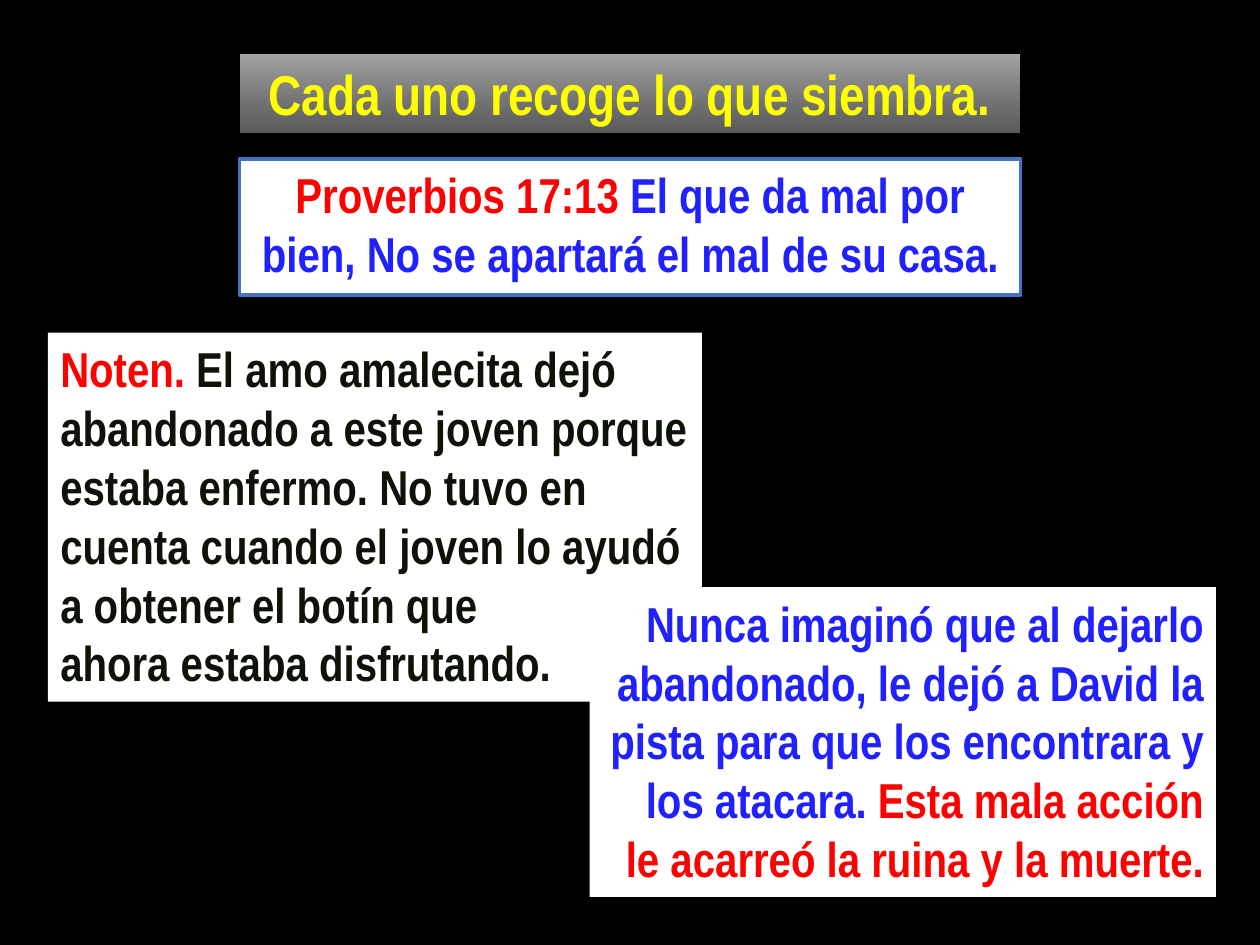
from dataclasses import dataclass

from lxml.etree import SubElement
from pptx import Presentation
from pptx.dml.color import RGBColor
from pptx.enum.shapes import MSO_SHAPE
from pptx.enum.text import MSO_ANCHOR, MSO_AUTO_SIZE, PP_ALIGN
from pptx.oxml.ns import qn
from pptx.util import Inches, Pt


@dataclass(frozen=True)
class Theme:
    font: str = "Arial Narrow"
    title_size: int = 32
    body_size: int = 28
    black: str = "000000"
    white: str = "FFFFFF"
    yellow: str = "FFFF00"
    red: str = "FF0000"
    blue: str = "2121FF"
    dark: str = "0E1307"
    navy: str = "002060"
    border: str = "4472C4"
    gradient_top: str = "A6A6A6"
    gradient_bottom: str = "797979"


class SlideBuilder:
    def __init__(self, slide, theme):
        self.slide = slide
        self.theme = theme
        self.paint(slide.background.fill, theme.black)

    def paint(self, fill, color):
        fill.solid()
        fill.fore_color.rgb = RGBColor.from_string(color)

    def add_box(self, left, top, width, height, border=None, border_width=0.75):
        shape = self.slide.shapes.add_shape(
            MSO_SHAPE.RECTANGLE, Inches(left), Inches(top), Inches(width), Inches(height))
        shape.shadow.inherit = False
        self.paint(shape.fill, self.theme.white)
        if border:
            self.paint(shape.line.fill, border)
            shape.line.width = Pt(border_width)
        else:
            shape.line.fill.background()
        return shape

    def add_gradient(self, shape):
        shape.fill.gradient()
        shape.fill.gradient_angle = 270
        colors = (self.theme.gradient_top, self.theme.gradient_bottom)
        for stop, color in zip(shape.fill.gradient_stops, colors):
            stop.color.rgb = RGBColor.from_string(color)
        gradient = shape._element.spPr.find(qn("a:gradFill"))
        last_color = list(gradient.iter(qn("a:srgbClr")))[-1]
        SubElement(last_color, qn("a:alpha")).set("val", "74000")

    def add_text(self, shape, paragraphs, size, alignment, outline_width=0.25):
        text_frame = shape.text_frame
        text_frame.word_wrap = True
        text_frame.vertical_anchor = MSO_ANCHOR.TOP
        text_frame.auto_size = MSO_AUTO_SIZE.SHAPE_TO_FIT_TEXT
        for index, pieces in enumerate(paragraphs):
            paragraph = text_frame.add_paragraph() if index else text_frame.paragraphs[0]
            paragraph.alignment = alignment
            for text, color, outline in pieces:
                run = paragraph.add_run()
                run.text = text
                run.font.name = self.theme.font
                run.font.size = Pt(size)
                run.font.bold = True
                self.paint(run.font.fill, color)
                self.add_outline(run, outline, outline_width)

    def add_outline(self, run, color, width):
        properties = run._r.get_or_add_rPr()
        line = SubElement(properties, qn("a:ln"), w=str(Pt(width)))
        SubElement(SubElement(line, qn("a:solidFill")), qn("a:srgbClr"), val=color)
        properties.insert(0, line)


def main():
    presentation = Presentation()
    presentation.slide_width = Inches(10)
    presentation.slide_height = Inches(7.5)
    theme = Theme()
    builder = SlideBuilder(presentation.slides.add_slide(presentation.slide_layouts[6]), theme)
    yellow = (theme.yellow, theme.yellow)
    red = (theme.red, theme.red)
    blue = (theme.blue, theme.blue)
    dark = (theme.dark, theme.navy)

    title = builder.add_box(1.9, 0.42, 6.2, 0.64, theme.black)
    builder.add_gradient(title)
    builder.add_text(title, [[("Cada uno recoge lo que siembra.", *yellow)]],
                     theme.title_size, PP_ALIGN.CENTER, 0.75)

    note = builder.add_box(0.38, 2.64, 5.19, 2.93)
    builder.add_text(note, [
        [("Noten.", *red),
         (" El amo amalecita dejó abandonado a este joven porque estaba enfermo. "
          "No tuvo en cuenta cuando el joven lo ayudó", *dark)],
        [("a obtener el botín que", *dark)],
        [("ahora estaba disfrutando.", *dark)],
    ], theme.body_size, PP_ALIGN.LEFT)

    verse = builder.add_box(1.9, 1.26, 6.2, 1.08, theme.border, 2)
    builder.add_text(verse, [
        [("Proverbios 17:13 ", *red),
         ("El que da mal por bien, No se apartará el mal de su casa.", *blue)],
    ], theme.body_size, PP_ALIGN.CENTER)

    outcome = builder.add_box(4.68, 4.66, 4.97, 2.46)
    builder.add_text(outcome, [
        [("Nunca imaginó que al dejarlo abandonado, le dejó a David la pista "
          "para que los encontrara y los atacara. ", *blue),
         ("Esta mala acción le acarreó la ruina y la muerte.", *red)],
    ], theme.body_size, PP_ALIGN.RIGHT)

    presentation.save("out.pptx")


if __name__ == "__main__":
    main()
